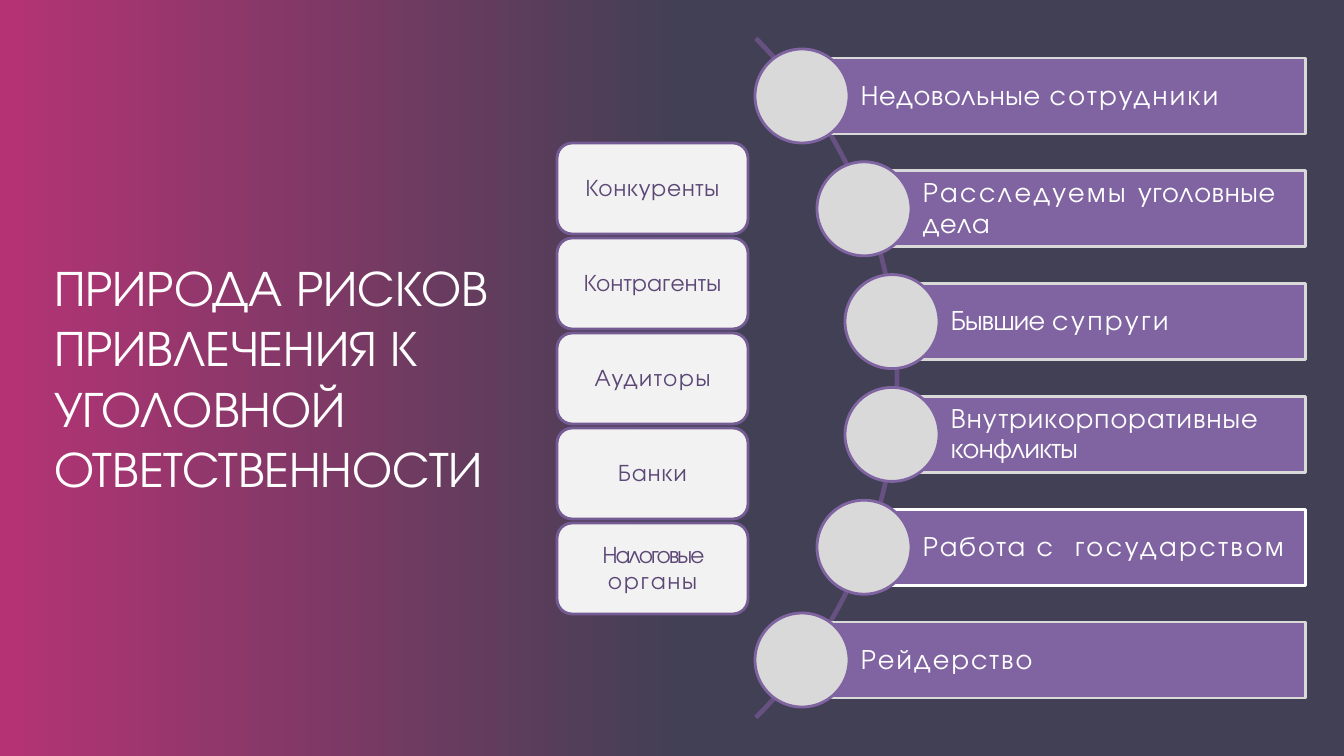
from pptx import Presentation
from pptx.dml.color import RGBColor
from pptx.enum.shapes import MSO_SHAPE
from pptx.enum.text import MSO_ANCHOR, MSO_AUTO_SIZE, PP_ALIGN
from pptx.util import Pt

WHITE = RGBColor(0xFF, 0xFF, 0xFF)
LIGHT = RGBColor(0xD9, 0xD9, 0xD9)
CARD_FILL = RGBColor(0xF2, 0xF2, 0xF2)
CARD_LINE = RGBColor(0x74, 0x5B, 0x93)
CARD_TEXT = RGBColor(0x5C, 0x47, 0x76)
PURPLE = RGBColor(0x80, 0x64, 0xA2)
ARC_LINE = RGBColor(0x67, 0x50, 0x82)
PINK = RGBColor(0xB5, 0x33, 0x75)
NAVY = RGBColor(0x41, 0x40, 0x54)
FONT = "TeX Gyre Adventor"

TITLE = "ПРИРОДА РИСКОВ ПРИВЛЕЧЕНИЯ К УГОЛОВНОЙ ОТВЕТСТВЕННОСТИ"
# Each span is its text and its letter spacing in points.
CARDS = [
    [("Конкуренты", 0.6)],
    [("Контрагенты", 0.2)],
    [("Аудиторы", 1.1)],
    [("Банки", 0.8)],
    [("Налоговые ", -1.4), ("органы", 1.4)],
]
# Each bar is its left edge in px, its outline and its spans.
BARS = [
    (802, LIGHT, [("Недовольные ", 0.5), ("сотрудники", 1.7)]),
    (864, LIGHT, [("Расследуемы ", 1.7), ("уголовные дела", 0.5)]),
    (892, LIGHT, [("Бывшие ", -0.5), ("супруги", 1.9)]),
    (892, LIGHT, [("Внутрикорпоративные ", 0.8), ("конфликты", -0.5)]),
    (864, WHITE, [("Работа ", 1.4), ("с ", 5), ("государством", 1.9)]),
    (802, LIGHT, [("Рейдерство", 1.5)]),
]

SLIDE_WIDTH, SLIDE_HEIGHT = 1344, 756
SCALE = 12192000 / SLIDE_WIDTH
TITLE_BOX = (44, 251, 505, 254)
CARD_LEFT, CARD_TOP, CARD_WIDTH, CARD_HEIGHT, CARD_STEP = 557, 143, 191, 91, 95
BAR_RIGHT, BAR_HEIGHT, CIRCLE = 1306, 76, 94
FIRST_CENTRE, LAST_CENTRE = 96, 660
ARC_BOX = (-62, -102, 960, 960)


def px(length):
    return round(length * SCALE)


def add_box(page, kind, box, fill, line):
    shape = page.shapes.add_shape(kind, *map(px, box))
    shape.shadow.inherit = False
    if fill is None:
        shape.fill.background()
    else:
        shape.fill.solid()
        shape.fill.fore_color.rgb = fill
    shape.line.color.rgb = line
    shape.line.width = Pt(2)
    return shape


def write(shape, spans, size, color, align, margins):
    """Set letter-spaced spans; margins are left, top, right, bottom in px."""
    frame = shape.text_frame
    left, top, right, bottom = map(px, margins)
    settings = {
        "word_wrap": True, "vertical_anchor": MSO_ANCHOR.MIDDLE,
        "margin_left": left, "margin_top": top,
        "margin_right": right, "margin_bottom": bottom,
    }
    for name, value in settings.items():
        setattr(frame, name, value)
    para = frame.paragraphs[0]
    para.alignment = align
    para.line_spacing = 0.9
    for text, spacing in spans:
        span = para.add_run()
        span.text = text
        span.font.name = FONT
        span.font.size = Pt(size)
        span.font.color.rgb = color
        span.font._element.set("spc", str(round(spacing * 100)))


def paint_background(page):
    fill = page.background.fill
    fill.gradient()
    fill.gradient_angle = 0
    for stop, position, color in zip(fill.gradient_stops, (0, 0.51), (PINK, NAVY)):
        stop.position = position
        stop.color.rgb = color


def add_title(page):
    title = page.shapes.title
    title.left, title.top, title.width, title.height = map(px, TITLE_BOX)
    frame = title.text_frame
    frame.text = TITLE
    frame.word_wrap = True
    frame.auto_size = MSO_AUTO_SIZE.NONE
    frame.vertical_anchor = MSO_ANCHOR.TOP
    para = frame.paragraphs[0]
    para.alignment = PP_ALIGN.LEFT
    font = para.runs[0].font
    font.name = FONT
    font.size = Pt(36)
    font.color.rgb = WHITE


def add_cards(page):
    for index, spans in enumerate(CARDS):
        box = (CARD_LEFT, CARD_TOP + index * CARD_STEP, CARD_WIDTH, CARD_HEIGHT)
        card = add_box(page, MSO_SHAPE.ROUNDED_RECTANGLE, box, CARD_FILL, CARD_LINE)
        write(card, spans, 17, CARD_TEXT, PP_ALIGN.CENTER, (7, 4, 7, 4))


def add_bars(page):
    arc = add_box(page, MSO_SHAPE.BLOCK_ARC, ARC_BOX, None, ARC_LINE)
    for index, value in enumerate((189, 27, 0.002)):
        arc.adjustments[index] = value
    step = (LAST_CENTRE - FIRST_CENTRE) / (len(BARS) - 1)
    for index, (left, line, spans) in enumerate(BARS):
        centre = FIRST_CENTRE + index * step
        box = (left, centre - BAR_HEIGHT / 2, BAR_RIGHT - left, BAR_HEIGHT)
        bar = add_box(page, MSO_SHAPE.RECTANGLE, box, PURPLE, line)
        write(bar, spans, 20, WHITE, PP_ALIGN.LEFT, (59, 6, 6, 6))
        circle = (left - CIRCLE / 2, centre - CIRCLE / 2, CIRCLE, CIRCLE)
        add_box(page, MSO_SHAPE.OVAL, circle, LIGHT, PURPLE)


def main():
    deck = Presentation()
    deck.slide_width, deck.slide_height = px(SLIDE_WIDTH), px(SLIDE_HEIGHT)
    page = deck.slides.add_slide(deck.slide_layouts[5])
    paint_background(page)
    add_title(page)
    add_cards(page)
    add_bars(page)
    deck.save("out.pptx")


if __name__ == "__main__":
    main()
